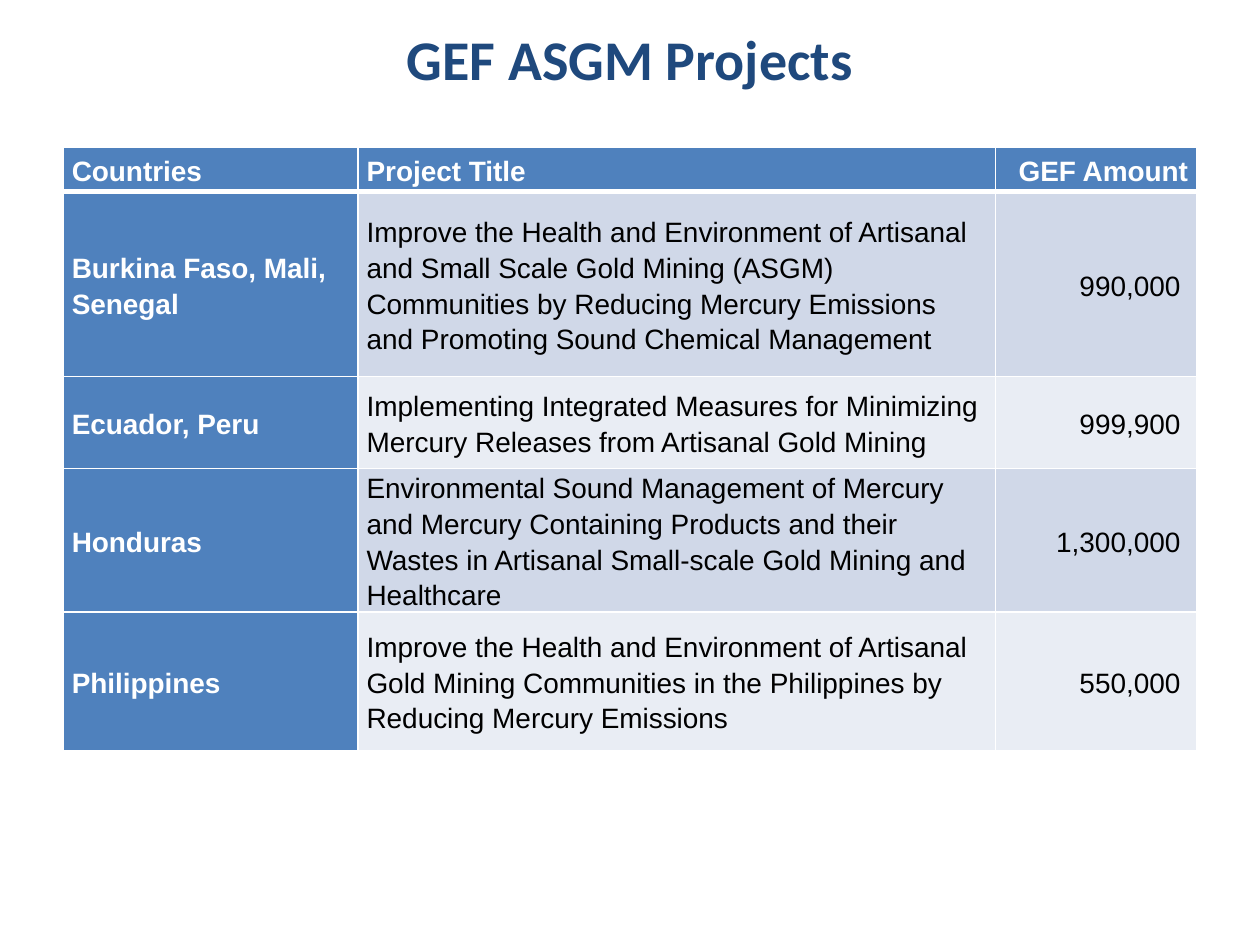
"""Build the GEF ASGM projects slide with its funding table."""
import pptx
import pptx.dml.color
import pptx.enum.text
import pptx.oxml
import pptx.oxml.ns
import pptx.util
from pptx.util import Inches

ALIGN = pptx.enum.text.PP_ALIGN
MIDDLE = pptx.enum.text.MSO_ANCHOR.MIDDLE


def color(hex_value):
    return pptx.dml.color.RGBColor.from_string(hex_value)


def write(frame, text, font="Arial", size=16, ink="000000", bold=False, align=ALIGN.LEFT, spacing=1.15):
    paragraph = frame.paragraphs[0]
    paragraph.alignment = align
    paragraph.line_spacing = spacing
    run = paragraph.add_run()
    run.text = text
    run.font.name = font
    run.font.size = pptx.util.Pt(size)
    run.font.bold = bold
    run.font.color.rgb = color(ink)


presentation = pptx.Presentation()
presentation.slide_width = Inches(10)
presentation.slide_height = Inches(7.5)
slide = presentation.slides.add_slide(presentation.slide_layouts[5])

title = slide.shapes.title
title.left, title.top = Inches(0.5), Inches(0.17)
title.width, title.height = Inches(9), Inches(0.58)
title.text_frame.vertical_anchor = MIDDLE
write(title.text_frame, "GEF ASGM Projects", font="Calibri", size=32, ink="1F497D",
      bold=True, align=ALIGN.CENTER, spacing=1.0)

projects = [
    ("Countries", "Project Title", "GEF Amount"),
    ("Burkina Faso, Mali, Senegal",
     "Improve the Health and Environment of Artisanal and Small Scale Gold Mining (ASGM) "
     "Communities by Reducing Mercury Emissions and Promoting Sound Chemical Management",
     "990,000 "),
    ("Ecuador, Peru",
     "Implementing Integrated Measures for Minimizing Mercury Releases from Artisanal Gold Mining",
     "999,900 "),
    ("Honduras",
     "Environmental Sound Management of Mercury and Mercury Containing Products and their "
     "Wastes in Artisanal Small-scale Gold Mining and Healthcare",
     "1,300,000 "),
    ("Philippines",
     "Improve the Health and Environment of Artisanal Gold Mining Communities in the "
     "Philippines by Reducing Mercury Emissions",
     "550,000 "),
]
column_widths = [2.34, 5.06, 1.6]
row_heights = [0.35, 1.47, 0.73, 1.1, 1.1]

project_table = slide.shapes.add_table(
    len(projects), len(column_widths), Inches(0.5), Inches(1.17),
    Inches(sum(column_widths)), Inches(sum(row_heights))).table
project_table.first_row = True
project_table.first_col = True
for column, width in zip(project_table.columns, column_widths):
    column.width = Inches(width)

for row_index, (project, height) in enumerate(zip(projects, row_heights)):
    project_table.rows[row_index].height = Inches(height)
    for column_index, text in enumerate(project):
        cell = project_table.cell(row_index, column_index)
        heading = row_index == 0 or column_index == 0
        band = "D0D8E8" if row_index % 2 else "E9EDF4"
        cell.vertical_anchor = MIDDLE
        cell.margin_left = cell.margin_right = Inches(0.07)
        cell.margin_top = cell.margin_bottom = 0
        border_widths = {"L": 1, "R": 1, "T": 3 if row_index == 1 else 1, "B": 3 if row_index == 0 else 1}
        for side, points in border_widths.items():
            cell._tc.get_or_add_tcPr().append(pptx.oxml.parse_xml(
                f'<a:ln{side} {pptx.oxml.ns.nsdecls("a")} w="{pptx.util.Pt(points)}">'
                f'<a:solidFill><a:srgbClr val="FFFFFF"/></a:solidFill></a:ln{side}>'))
        cell.fill.solid()
        cell.fill.fore_color.rgb = color("4F81BD" if heading else band)
        write(cell.text_frame, text, ink="FFFFFF" if heading else "000000", bold=heading,
              align=ALIGN.RIGHT if column_index == 2 else ALIGN.LEFT)

presentation.save("out.pptx")
